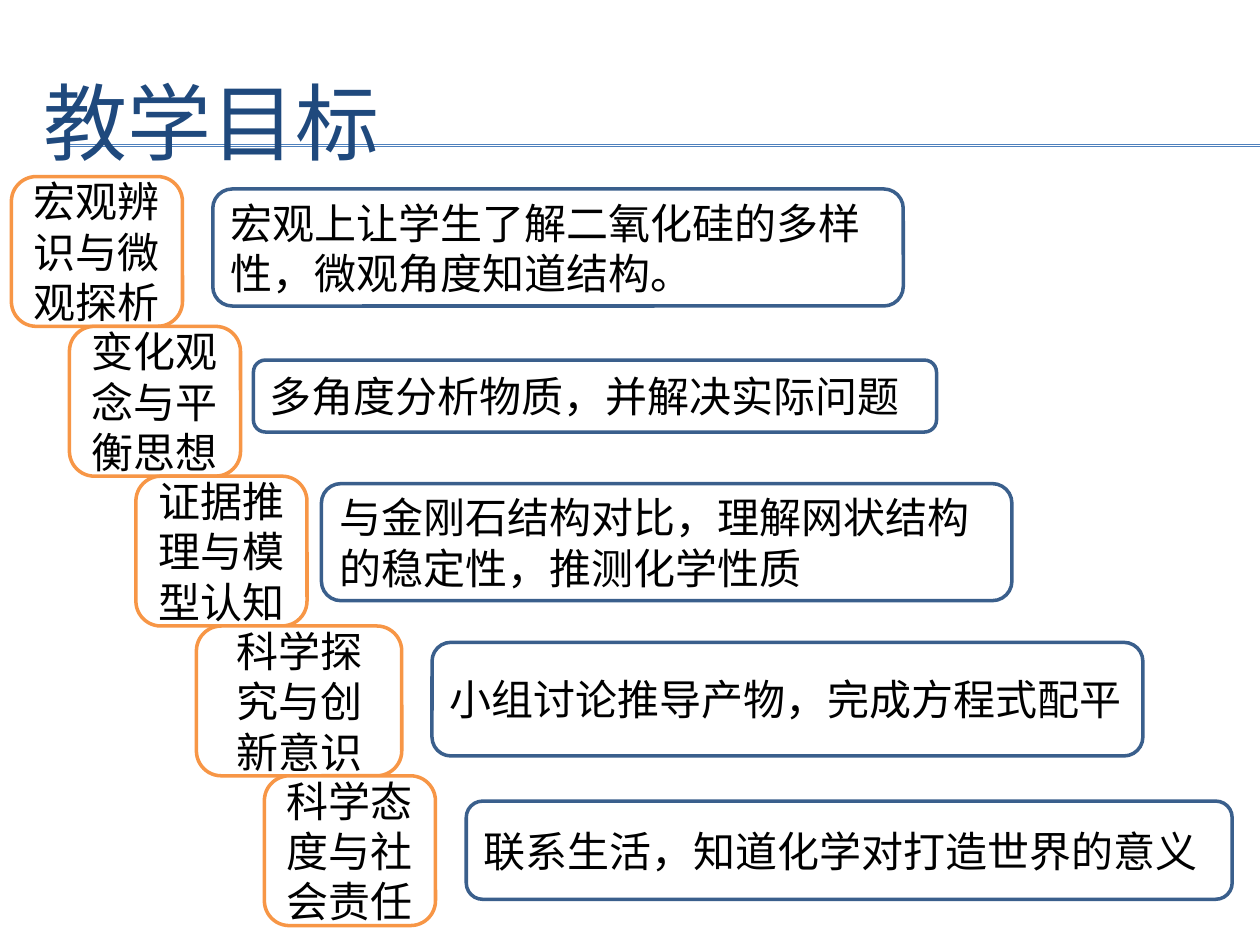
from lxml import etree
from pptx import Presentation
from pptx.dml.color import RGBColor
from pptx.enum import shapes, text
from pptx.oxml.ns import qn
from pptx.util import Cm, Pt

FONT = "Lato"
COLORS = {
    "title": "1F497D", "rule": "4F81BD", "tag": "F79646",
    "note": "3A5F8C", "fill": "FFFFFF", "text": "000000",
}
STEP = 3.02  # height of one stair

# Tag, its left and width; note, its offset from the tag and its size (cm)
GOALS = [
    ("宏观辨识与微观探析", 0.23, 3.45,
     "宏观上让学生了解二氧化硅的多样性，微观角度知道结构。", (4.06, 0.25, 13.92, 2.36)),
    ("变化观念与平衡思想", 1.4, 3.45,
     "多角度分析物质，并解决实际问题", (3.71, 0.68, 13.77, 1.45)),
    ("证据推理与模型认知", 2.74, 3.45,
     "与金刚石结构对比，理解网状结构的稳定性，推测化学性质", (3.74, 0.15, 13.92, 2.36)),
    ("科学探究与创新意识", 3.96, 4.14,
     "小组讨论推导产物，完成方程式配平", (4.75, 0.33, 14.33, 2.29)),
    ("科学态度与社会责任", 5.33, 3.45,
     "联系生活，知道化学对打造世界的意义", (4.07, 0.51, 15.44, 1.98)),
]


def color(name):
    return RGBColor.from_string(COLORS[name])


def write(frame, words, size, ink, align):
    frame.word_wrap = True
    frame.vertical_anchor = text.MSO_ANCHOR.MIDDLE
    para = frame.paragraphs[0]
    para.alignment = align
    run = para.add_run()
    run.text = words
    run.font.name = FONT
    run.font.size = Pt(size)
    run.font.color.rgb = color(ink)


def add_rule(slide, left, top, width):
    line = slide.shapes.add_connector(
        shapes.MSO_CONNECTOR.STRAIGHT, Cm(left), Cm(top), Cm(left + width), Cm(top))
    line.line.color.rgb = color("rule")
    line.line.width = Pt(0.75)
    etree.SubElement(line._element.spPr, qn("a:effectLst"))


def add_head(slide, left, top, width, height):
    # Double rule behind the title
    for drop in (1.65, 1.68):
        add_rule(slide, left + 0.79, top + drop, width + 0.63 - 0.79)
    title = slide.shapes.title
    title.left, title.top = Cm(left), Cm(top)
    title.width, title.height = Cm(width), Cm(height)
    write(title.text_frame, "教学目标", 48, "title", text.PP_ALIGN.LEFT)
    title._element.getparent().append(title._element)


def add_box(slide, box, words, edge, align):
    shape = slide.shapes.add_shape(
        shapes.MSO_SHAPE.ROUNDED_RECTANGLE, *(Cm(n) for n in box))
    shape.shadow.inherit = False
    shape.fill.solid()
    shape.fill.fore_color.rgb = color("fill")
    shape.line.color.rgb = color(edge)
    shape.line.width = Pt(2)
    write(shape.text_frame, words, 24, "text", align)


def add_goal(slide, left, top, width, tag, note, place):
    add_box(slide, (left, top, width, STEP), tag, "tag", text.PP_ALIGN.CENTER)
    dx, dy, wide, high = place
    add_box(slide, (left + dx, top + dy, wide, high), note, "note", text.PP_ALIGN.LEFT)


def main():
    deck = Presentation()
    deck.slide_width, deck.slide_height = Cm(25.4), Cm(19.05)
    slide = deck.slides.add_slide(deck.slide_layouts[5])
    add_head(slide, 0.63, 1.27, 24.13, 2.34)
    # Stairs of goals
    for i, (tag, left, width, note, place) in enumerate(GOALS):
        add_goal(slide, left, 3.56 + i * STEP, width, tag, note, place)
    deck.save("out.pptx")


if __name__ == "__main__":
    main()
